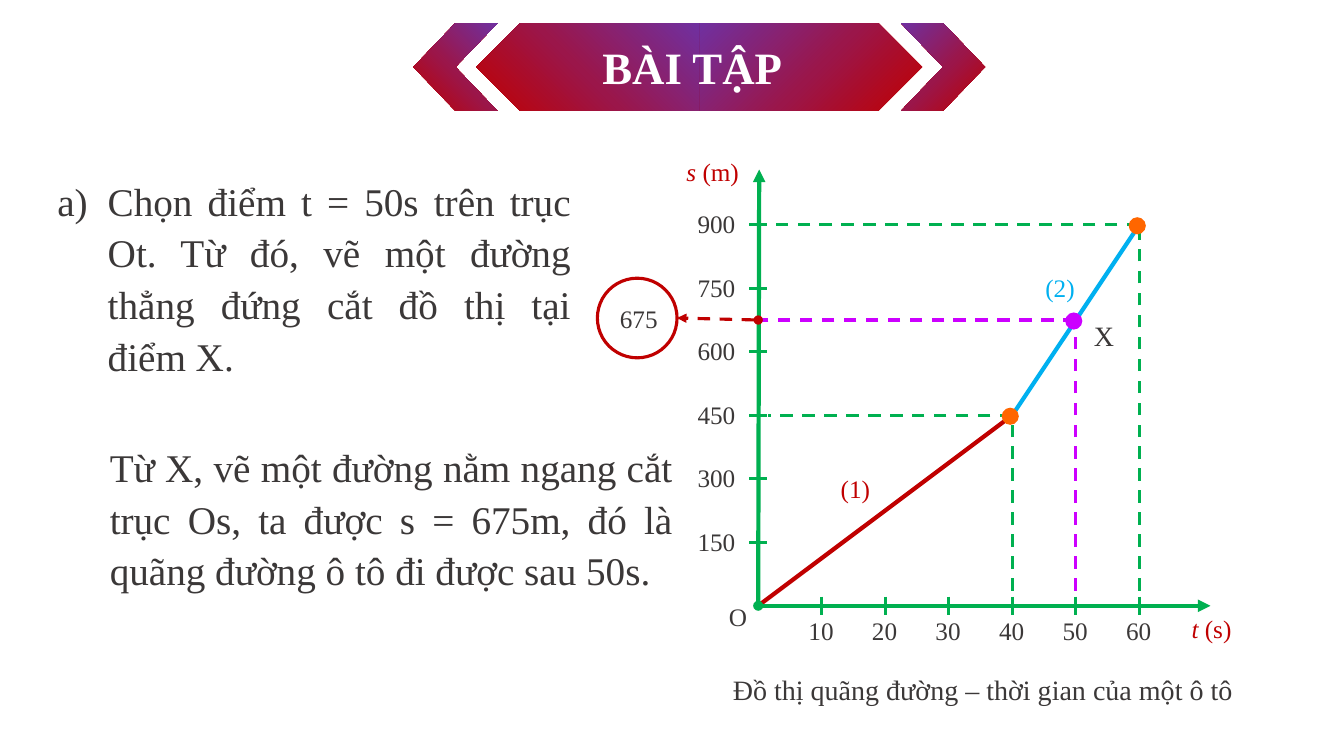
from lxml.etree import SubElement
from pptx import Presentation
from pptx.dml.color import RGBColor
from pptx.enum.dml import MSO_LINE
from pptx.enum.shapes import MSO_CONNECTOR, MSO_SHAPE
from pptx.enum.text import MSO_AUTO_SIZE, PP_ALIGN
from pptx.oxml.ns import qn
from pptx.util import Inches, Pt

FONT = "Times New Roman"
INK = RGBColor(0x3B, 0x38, 0x38)
WHITE = RGBColor(0xFF, 0xFF, 0xFF)
RED = RGBColor(0xC0, 0x00, 0x00)
PLUM = RGBColor(0x9B, 0x16, 0x4A)
PURPLE = RGBColor(0x70, 0x30, 0xA0)
GREEN = RGBColor(0x00, 0xB0, 0x50)
BLUE = RGBColor(0x00, 0xB0, 0xF0)
ORANGE = RGBColor(0xFF, 0x66, 0x00)
MAGENTA = RGBColor(0xCC, 0x00, 0xFF)


def add_text(slide, box, text, size, color=INK, bold=False, italic_part=""):
    """Left-aligned text; italic_part is set in italics before the text."""
    tb = slide.shapes.add_textbox(*map(Inches, box))
    tf = tb.text_frame
    tf.word_wrap = True
    tf.auto_size = MSO_AUTO_SIZE.SHAPE_TO_FIT_TEXT
    p = tf.paragraphs[0]
    for part in filter(None, (italic_part, text)):
        r = p.add_run()
        r.text = part
        r.font.name, r.font.size, r.font.bold = FONT, Pt(size), bold
        r.font.italic = part == italic_part
        r.font.color.rgb = color
    return p


def add_line(slide, start, end, color, width=2.25, dashed=False, head=None, tail=None):
    c = slide.shapes.add_connector(MSO_CONNECTOR.STRAIGHT, *map(Inches, (*start, *end)))
    c.line.color.rgb = color
    c.line.width = Pt(width)
    if dashed:
        c.line.dash_style = MSO_LINE.DASH
    ln = c.line._get_or_add_ln()
    for tag, kind in (("a:headEnd", head), ("a:tailEnd", tail)):
        if kind:
            SubElement(ln, qn(tag), type=kind)
    SubElement(c._element.spPr, qn("a:effectLst"))


def add_dot(slide, center, size, fill=None, outline=None):
    x, y = center
    sp = slide.shapes.add_shape(
        MSO_SHAPE.OVAL, *map(Inches, (x - size / 2, y - size / 2, size, size)))
    sp.shadow.inherit = False
    if fill:
        sp.fill.solid()
        sp.fill.fore_color.rgb = fill
    else:
        sp.fill.background()
    if outline:
        sp.line.color.rgb = outline
        sp.line.width = Pt(2.25)
    else:
        sp.line.fill.background()


def add_banner_piece(slide, kind, box, flipped):
    sp = slide.shapes.add_shape(kind, *map(Inches, box))
    sp.shadow.inherit = False
    sp.line.fill.background()
    sp.fill.gradient()
    sp.fill.gradient_angle = 135
    # Three colour stops
    stops = sp._element.spPr.find(qn("a:gradFill")).find(qn("a:gsLst"))
    for old in list(stops):
        stops.remove(old)
    for pos, color in ((0, RED), (47, PLUM), (100, PURPLE)):
        gs = SubElement(stops, qn("a:gs"), pos=str(pos * 1000))
        SubElement(gs, qn("a:srgbClr"), val=str(color))
    if flipped:
        sp._element.spPr.find(qn("a:xfrm")).set("flipH", "1")


def banner(slide, box, title):
    """Two mirrored halves, each a plate and a chevron."""
    x, y, w, h = box
    mid, plate, chevron = x + w / 2, 0.39 * w, 0.147 * w
    for kind, inner, width in ((MSO_SHAPE.CHEVRON, w / 2 - chevron, chevron),
                               (MSO_SHAPE.PENTAGON, 0, plate)):
        add_banner_piece(slide, kind, (mid + inner, y, width, h), False)
        add_banner_piece(slide, kind, (mid - inner - width, y, width, h), True)
    add_text(slide, (mid - 1.06, y + 0.11, 2.11, 0.64), title, 32, WHITE, bold=True)


def explanation(slide, box, text, numbered=False):
    p = add_text(slide, box, text, 28)
    p.alignment = PP_ALIGN.JUSTIFY
    p.line_spacing = 1.1
    if numbered:
        pPr = p._p.get_or_add_pPr()
        pPr.set("marL", str(Inches(0.5)))
        pPr.set("indent", str(-Inches(0.5)))
        SubElement(pPr, qn("a:buFont"), typeface="+mj-lt")
        SubElement(pPr, qn("a:buAutoNum"), type="alphaLcParenR")


def graph(slide, box):
    """Distance-time graph; the box is the plot from (0, 0) to (60, 900)."""
    x, y, w, h = box
    col, row, bottom = w / 6, h / 6, y + h
    tick = 0.09

    def at(t, s):
        return x + t / 10 * col, bottom - s / 150 * row

    origin, bend, read, end = at(0, 0), at(40, 450), at(50, 675), at(60, 900)

    # Axes with ticks and numbers
    add_line(slide, origin, bend, RED, 3)
    add_line(slide, origin, (x + 7.12 * col, bottom), GREEN, 3, tail="triangle")
    add_line(slide, (x + 0.01, y - 0.87 * row), origin, GREEN, 3, head="triangle")
    add_dot(slide, origin, 0.1, GREEN)
    for n in range(1, 7):
        tx, sy = at(10 * n, 150 * n)
        add_line(slide, (tx, bottom - tick), (tx, bottom + tick), GREEN)
        add_line(slide, (x - tick, sy), (x + tick, sy), GREEN)
        add_text(slide, (tx - 0.23, bottom + 0.05, 0.55, 0.4), str(10 * n), 18)
        add_text(slide, (x - 0.7, sy - 0.21, 0.7, 0.4), str(150 * n), 18)

    # Names of axes, origin and segments
    for left, top, width, text, color, symbol in (
            (x + 4.2, bottom + 0.03, 0.73, "(s)", RED, "t "),
            (x - 0.81, y - 0.73, 0.9, "(m)", RED, "s "),
            (x - 0.39, bottom - 0.09, 0.4, "O", INK, ""),
            (x + 0.72, bottom - 1.36, 0.63, "(1)", RED, ""),
            (x + 2.75, y + 0.42, 0.63, "(2)", BLUE, "")):
        add_text(slide, (left, top, width, 0.4), text, 18, color, italic_part=symbol)

    # Guides, second segment and points
    for (px, py), color, gap in ((bend, GREEN, 0.1), (end, GREEN, 0.18),
                                 (read, MAGENTA, 0)):
        add_line(slide, (px, bottom - 0.15), (px, py), color, dashed=True)
        add_line(slide, (px, py), (x + gap, py), color, dashed=True)
    add_line(slide, bend, end, BLUE, 3)
    for (px, py), color in ((end, ORANGE), (bend, ORANGE), (read, MAGENTA)):
        add_dot(slide, (px - 0.02, py + 0.01), 0.17, color)
    add_text(slide, (read[0] + 0.08, read[1] - 0.06, 0.45, 0.44), "X", 20)

    # Value read on the vertical axis
    ring, size, level = x - 1.2, 0.79, read[1]
    add_text(slide, (ring - 0.27, level - 0.21, 0.7, 0.4), "675", 18)
    add_dot(slide, (ring, level - 0.02), size, outline=RED)
    add_line(slide, (x, level), (ring + size / 2, level - 0.02), RED,
             dashed=True, head="oval", tail="triangle")

    # Caption
    add_text(slide, (x - 0.35, bottom + 0.61, 5.18, 0.44),
             "Đồ thị quãng đường – thời gian của một ô tô", 20)


def main():
    prs = Presentation()
    prs.slide_width, prs.slide_height = Inches(13.33), Inches(7.5)
    slide = prs.slides.add_slide(prs.slide_layouts[6])
    banner(slide, (4.1, 0.23, 5.67, 0.87), "BÀI TẬP")
    graph(slide, (7.52, 2.23, 3.78, 3.78))
    explanation(slide, (0.47, 1.66, 5.29, 2.14),
                "Chọn điểm t = 50s trên trục Ot. Từ đó, vẽ một đường thẳng đứng "
                "cắt đồ thị tại điểm X.", numbered=True)
    explanation(slide, (0.99, 4.3, 5.78, 1.62),
                "Từ X, vẽ một đường nằm ngang cắt trục Os, ta được s = 675m, "
                "đó là quãng đường ô tô đi được sau 50s.")
    prs.save("out.pptx")


if __name__ == "__main__":
    main()
